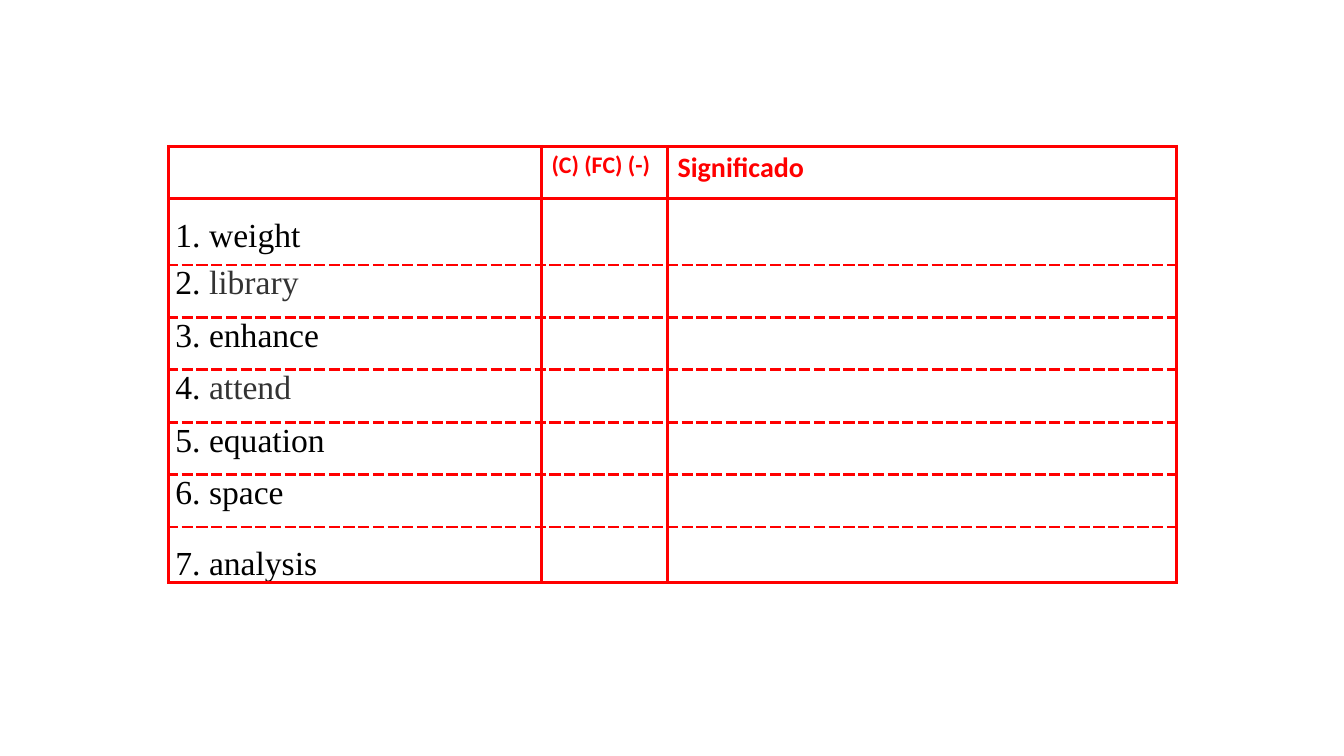
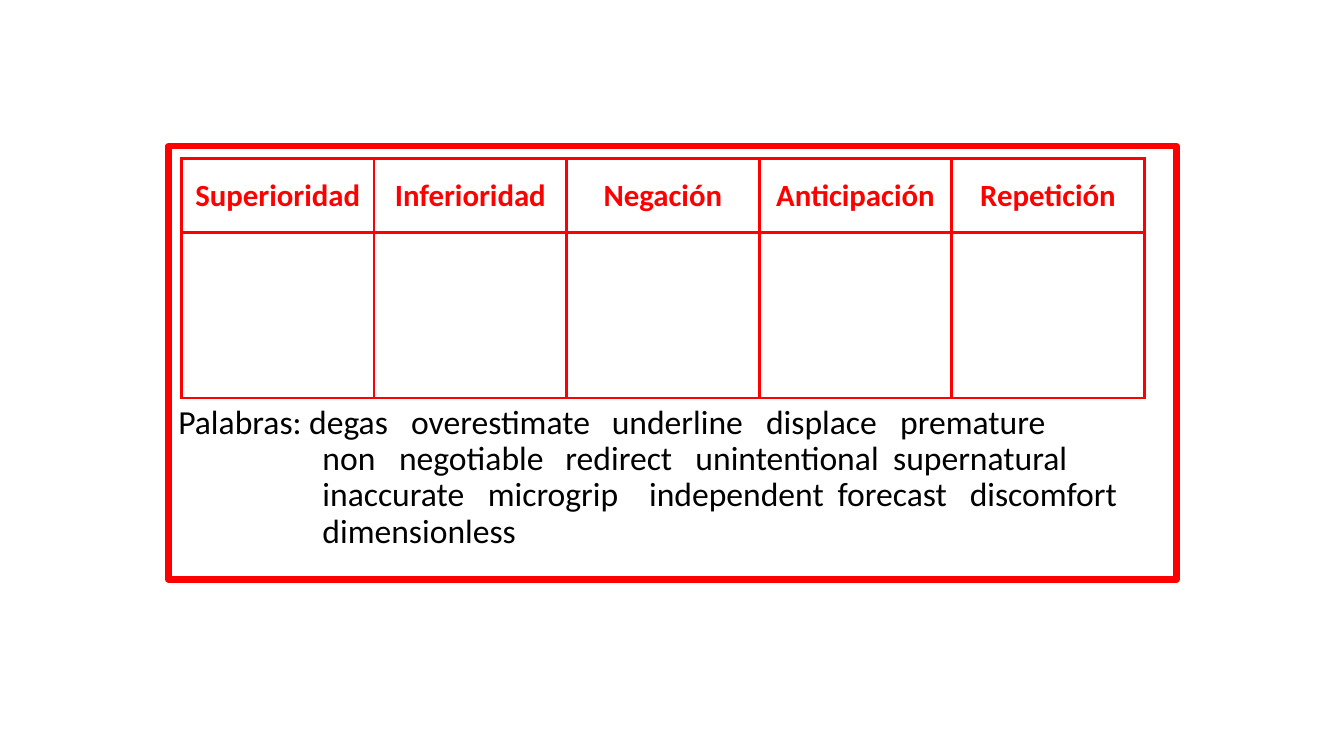
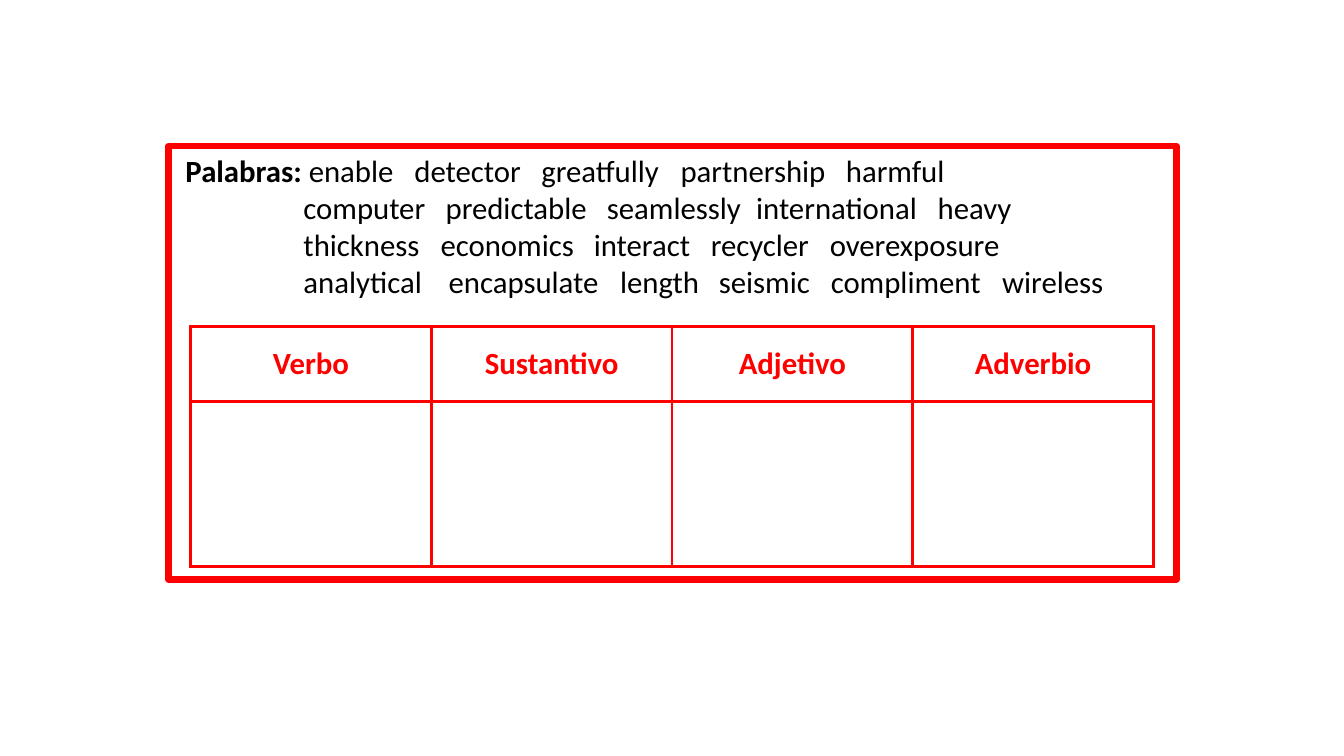
from dataclasses import dataclass

import pptx
import pptx.dml.color
import pptx.enum.text
import pptx.oxml
import pptx.oxml.ns
import pptx.util
from pptx.util import Inches

COLOURS = {"accent": "FF0000", "text": "000000", "muted": "333333", "paper": "FFFFFF"}
SANS = "Calibri"
SERIF = "Times New Roman"
FRAME_LEFT, FRAME_TOP, FRAME_WIDTH, FRAME_HEIGHT = 1.67, 1.45, 10, 4.3
TABLE_WIDTH = 9.55
BORDER = 2.25
CENTER = pptx.enum.text.PP_ALIGN.CENTER
MIDDLE = pptx.enum.text.MSO_ANCHOR.MIDDLE


@dataclass(frozen=True)
class Entry:
    number: int
    word: str
    colour: str = "text"


@dataclass(frozen=True)
class WordLine:
    words: tuple[str, ...]
    stops: tuple[float, ...]
    lead: str = ""


@dataclass(frozen=True)
class Exercise:
    headings: tuple[str, ...]
    table_left: float
    table_top: float
    lines: tuple[WordLine, ...]
    size: float
    spacing: float
    inset_left: float
    inset_top: float
    bold_label: bool


ENTRIES = (
    Entry(1, "weight"),
    Entry(2, "library", "muted"),
    Entry(3, "enhance"),
    Entry(4, "attend", "muted"),
    Entry(5, "equation"),
    Entry(6, "space"),
    Entry(7, "analysis"),
)

EXERCISES = (
    Exercise(
        headings=("Superioridad", "Inferioridad", "Negación", "Anticipación", "Repetición"),
        table_left=1.8,
        table_top=1.57,
        lines=(
            WordLine(("overestimate", "underline", "displace", "premature"),
                     (2.31, 4.3, 5.83, 7.16), lead="degas"),
            WordLine(("non", "negotiable", "redirect", "unintentional", "supernatural"),
                     (1.43, 2.19, 3.84, 5.13, 7.09)),
            WordLine(("inaccurate", "microgrip", "independent", "forecast", "discomfort"),
                     (1.43, 3.07, 4.67, 6.54, 7.85)),
            WordLine(("dimensionless",), (1.43,)),
        ),
        size=24,
        spacing=0.9,
        inset_left=0.1,
        inset_top=2.57,
        bold_label=False,
    ),
    Exercise(
        headings=("Verbo", "Sustantivo", "Adjetivo", "Adverbio"),
        table_left=1.89,
        table_top=3.24,
        lines=(
            WordLine(("detector", "greatfully", "partnership", "harmful"),
                     (2.27, 3.53, 4.91, 6.55), lead="enable"),
            WordLine(("computer", "predictable", "seamlessly", "international", "heavy"),
                     (1.17, 2.58, 4.18, 5.66, 7.46)),
            WordLine(("thickness", "economics", "interact", "recycler", "overexposure"),
                     (1.17, 2.53, 4.05, 5.21, 6.39)),
            WordLine(("analytical", "encapsulate", "length", "seismic", "compliment", "wireless"),
                     (1.17, 2.61, 4.31, 5.29, 6.4, 8.1)),
        ),
        size=22,
        spacing=1.0,
        inset_left=0.17,
        inset_top=0.06,
        bold_label=True,
    ),
)


def rgb(name: str) -> pptx.dml.color.RGBColor:
    return pptx.dml.color.RGBColor.from_string(COLOURS[name])


def add_page(deck):
    return deck.slides.add_slide(deck.slide_layouts.get_by_name("Blank"))


def add_span(para, text: str, *, size: float, font: str = SANS,
             colour: str = "text", bold: bool = False) -> None:
    span = para.add_run()
    span.text = text
    span.font.size = pptx.util.Pt(size)
    span.font.name = font
    span.font.bold = bold
    span.font.color.rgb = rgb(colour)


def add_border(cell, side: str, dash: str) -> None:
    namespace = pptx.oxml.ns.nsdecls("a")
    cell._tc.get_or_add_tcPr().append(pptx.oxml.parse_xml(
        f'<a:ln{side} {namespace} w="{pptx.util.Pt(BORDER)}">'
        f'<a:solidFill><a:srgbClr val="{COLOURS["accent"]}"/></a:solidFill>'
        f'<a:prstDash val="{dash}"/></a:ln{side}>'))


def add_grid(page, left: float, top: float, widths: list[float], heights: list[float],
             dashed_inside: bool = False):
    table = page.shapes.add_table(
        len(heights), len(widths), Inches(left), Inches(top),
        Inches(sum(widths)), Inches(sum(heights))).table
    table.first_row = False
    table.horz_banding = False
    for column, width in zip(table.columns, widths):
        column.width = Inches(width)
    for index, (row, height) in enumerate(zip(table.rows, heights)):
        row.height = Inches(height)
        top_dash = "sysDash" if dashed_inside and index > 1 else "solid"
        bottom_dash = "sysDash" if dashed_inside and 0 < index < len(heights) - 1 else "solid"
        for cell in row.cells:
            for side, dash in (("L", "solid"), ("R", "solid"), ("T", top_dash), ("B", bottom_dash)):
                add_border(cell, side, dash)
            cell.fill.solid()
            cell.fill.fore_color.rgb = rgb("paper")
    return table


def add_heading(cell, text: str, *, size: float, centred: bool = False) -> None:
    para = cell.text_frame.paragraphs[0]
    if centred:
        para.alignment = CENTER
        cell.vertical_anchor = MIDDLE
    add_span(para, text, size=size, colour="accent", bold=True)


def build_vocabulary(deck) -> None:
    page = add_page(deck)
    table = add_grid(page, FRAME_LEFT, FRAME_TOP, [3.7, 1.25, 5.05],
                     [0.52, 0.66] + [0.52] * 6, dashed_inside=True)
    add_heading(table.cell(0, 1), "(C) (FC) (-)", size=17)
    add_heading(table.cell(0, 2), "Significado", size=20)
    for entry in ENTRIES:
        cell = table.cell(entry.number, 0)
        cell.margin_left = cell.margin_right = Inches(0.07)
        cell.margin_top = cell.margin_bottom = Inches(0)
        para = cell.text_frame.paragraphs[0]
        if entry in (ENTRIES[0], ENTRIES[-1]):
            para.line_spacing = 1.5
        else:
            para.space_after = pptx.util.Pt(12)
        add_span(para, f"{entry.number}. ", size=24, font=SERIF)
        add_span(para, entry.word, size=24, font=SERIF, colour=entry.colour)


def add_tab_stops(para, stops: tuple[float, ...]) -> None:
    marks = "".join(f'<a:tab pos="{Inches(stop)}" algn="l"/>' for stop in stops)
    para._p.get_or_add_pPr().append(pptx.oxml.parse_xml(
        f'<a:tabLst {pptx.oxml.ns.nsdecls("a")}>{marks}</a:tabLst>'))


def add_word_box(page, exercise: Exercise) -> None:
    box = page.shapes.add_textbox(Inches(FRAME_LEFT), Inches(FRAME_TOP),
                                  Inches(FRAME_WIDTH), Inches(FRAME_HEIGHT))
    box.line.color.rgb = rgb("accent")
    box.line.width = pptx.util.Pt(4.5)
    frame = box.text_frame
    frame.word_wrap = True
    frame.margin_left = Inches(exercise.inset_left)
    frame.margin_top = Inches(exercise.inset_top)
    for index, line in enumerate(exercise.lines):
        para = frame.add_paragraph() if index else frame.paragraphs[0]
        para.line_spacing = exercise.spacing
        add_tab_stops(para, line.stops)
        if line.lead:
            add_span(para, "Palabras:", size=exercise.size, bold=exercise.bold_label)
            add_span(para, f" {line.lead}", size=exercise.size)
        add_span(para, "".join(f"\t{word}" for word in line.words), size=exercise.size)


def build_exercise(deck, exercise: Exercise) -> None:
    page = add_page(deck)
    add_word_box(page, exercise)
    count = len(exercise.headings)
    table = add_grid(page, exercise.table_left, exercise.table_top,
                     [TABLE_WIDTH / count] * count, [0.74, 1.64])
    for column, heading in enumerate(exercise.headings):
        add_heading(table.cell(0, column), heading, size=22, centred=True)


def main() -> None:
    deck = pptx.Presentation()
    deck.slide_width, deck.slide_height = Inches(13.33), Inches(7.5)
    build_vocabulary(deck)
    for exercise in EXERCISES:
        build_exercise(deck, exercise)
    deck.save("out.pptx")


if __name__ == "__main__":
    main()
